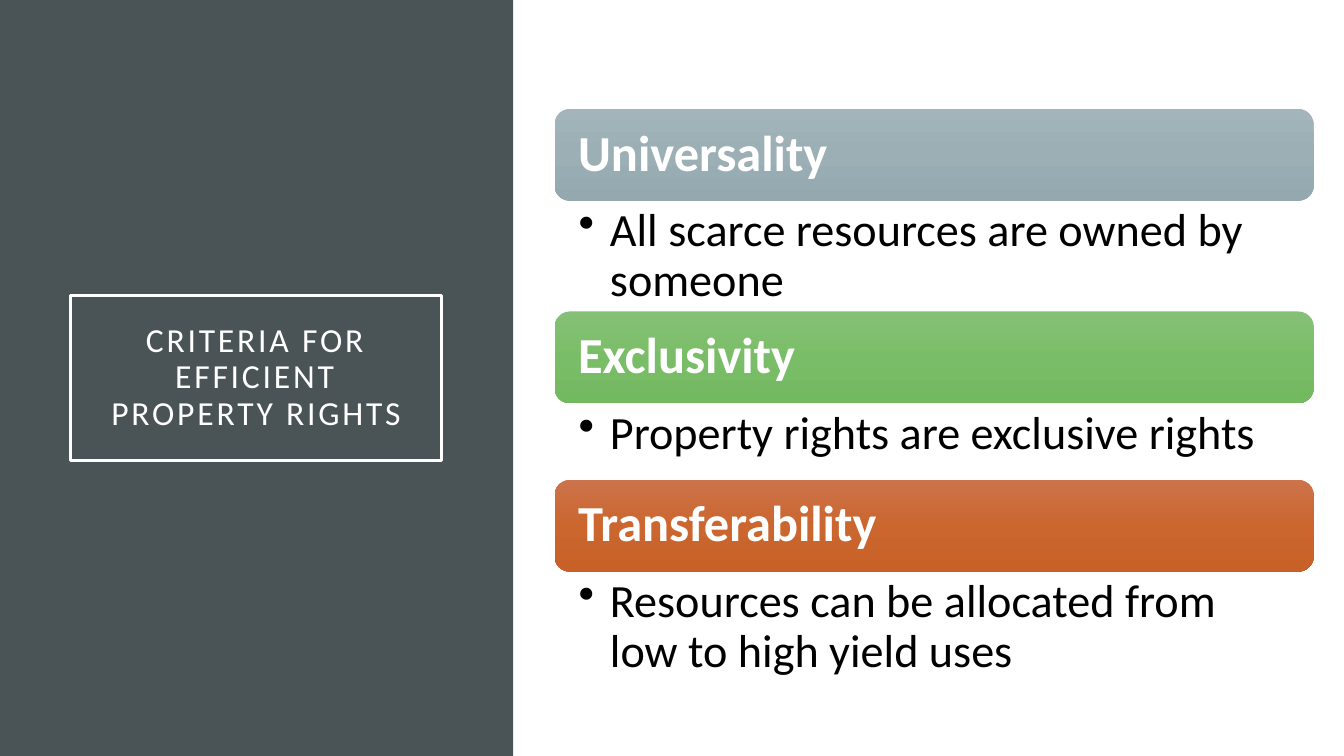
from copy import deepcopy

from pptx import Presentation
from pptx.dml.color import RGBColor
from pptx.enum.shapes import MSO_SHAPE as Shape
from pptx.enum.text import MSO_ANCHOR as Anchor, PP_ALIGN as Align
from pptx.oxml.ns import qn
from pptx.util import Inches, Pt

FONT = "Calibri"
COLORS = {"panel": "4A5356", "white": "FFFFFF", "black": "000000"}
CRITERIA = [
    ("Universality", "All scarce resources are owned by someone",
     1.1, ("A3B5BB", "9BAFB5", "93A9AF")),
    ("Exclusivity", "Property rights are exclusive rights",
     0.76, ("85C076", "7ABD68", "73B960")),
    ("Transferability", "Resources can be allocated from low to high yield uses",
     1.1, ("CC734B", "CB662F", "C86128")),
]
LEFT, TOP, WIDTH, BAR_HEIGHT = 5.5, 1.08, 7.53, 0.91


def rgb(name):
    """Return the colour with the given name in the palette."""
    return RGBColor.from_string(COLORS[name])


def add_box(slide, kind, left, top, width, height):
    """Add a plain shape with no shadow, fill or line."""
    box = slide.shapes.add_shape(
        kind, Inches(left), Inches(top), Inches(width), Inches(height))
    box.shadow.inherit = False
    box.fill.background()
    box.line.fill.background()
    return box


def add_bullet(paragraph, indent):
    """Give a paragraph a round bullet with a hanging indent."""
    properties = paragraph._p.get_or_add_pPr()
    properties.set("marL", str(Inches(indent)))
    properties.set("indent", str(-Inches(indent)))
    bullet = properties.makeelement(qn("a:buChar"), {"char": "•"})
    properties.append(bullet)


def write(box, text, *, size, color, insets, bold=False, align=Align.LEFT,
          anchor=Anchor.MIDDLE, spacing=0, bullet=False):
    """Write one formatted paragraph in a shape."""
    frame = box.text_frame
    frame.word_wrap = True
    frame.vertical_anchor = anchor
    (frame.margin_left, frame.margin_top,
     frame.margin_right, frame.margin_bottom) = map(Inches, insets)
    paragraph = frame.paragraphs[0]
    paragraph.alignment = align
    paragraph.line_spacing = 0.9
    if bullet:
        add_bullet(paragraph, 0.31)
    run = paragraph.add_run()
    run.text = text
    run.font.name = FONT
    run.font.size = Pt(size)
    run.font.bold = bold
    run.font.color.rgb = rgb(color)
    if spacing:
        run._r.get_or_add_rPr().set("spc", str(spacing * 100))


def fill_gradient(shape, shades):
    """Fill a shape from top to bottom with three evenly spaced shades."""
    shape.fill.gradient()
    shape.fill.gradient_angle = 270
    first_stop = shape._element.spPr.find(".//" + qn("a:gs"))
    first_stop.addnext(deepcopy(first_stop))
    for index, (stop, shade) in enumerate(zip(shape.fill.gradient_stops, shades)):
        stop.position = index / 2
        stop.color.rgb = RGBColor.from_string(shade)


def add_title_panel(slide):
    """Add the dark side panel with the framed title."""
    panel = add_box(slide, Shape.RECTANGLE, 0, 0, 5.09, 7.5)
    panel.fill.solid()
    panel.fill.fore_color.rgb = rgb("panel")
    title = add_box(slide, Shape.RECTANGLE, 0.7, 2.93, 3.68, 1.64)
    title.line.color.rgb = rgb("white")
    title.line.width = Pt(2.5)
    write(title, "CRITERIA FOR EFFICIENT PROPERTY RIGHTS", size=24,
          color="white", insets=(0.2, 0.2, 0.2, 0.2), align=Align.CENTER, spacing=2)


def add_criterion(slide, top, heading, detail, detail_height, shades):
    """Add a heading bar with its bullet below and return the bottom."""
    bar = add_box(slide, Shape.ROUNDED_RECTANGLE, LEFT, top, WIDTH, BAR_HEIGHT)
    fill_gradient(bar, shades)
    write(bar, heading, size=36, color="white", bold=True,
          insets=(0.19, 0.15, 0.19, 0.15))
    detail_top = top + BAR_HEIGHT
    explanation = add_box(
        slide, Shape.RECTANGLE, LEFT, detail_top, WIDTH, detail_height)
    write(explanation, detail, size=33, color="black", anchor=Anchor.TOP,
          insets=(0.24, 0.06, 0.33, 0.06), bullet=True)
    return detail_top + detail_height


def main():
    """Build the slide and save it."""
    deck = Presentation()
    deck.slide_width, deck.slide_height = Inches(13.33), Inches(7.5)
    slide = deck.slides.add_slide(deck.slide_layouts[6])
    add_title_panel(slide)
    top = TOP
    for criterion in CRITERIA:
        top = add_criterion(slide, top, *criterion)
    deck.save("out.pptx")


if __name__ == "__main__":
    main()
